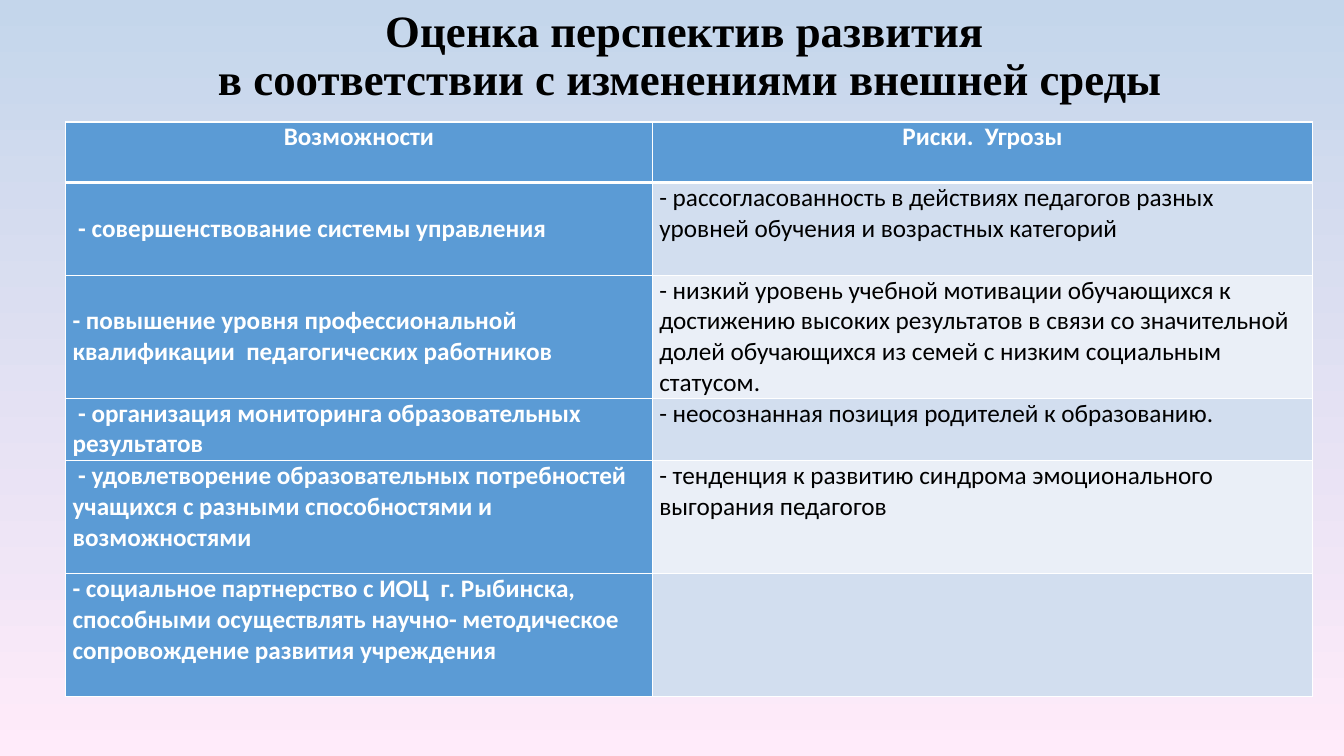
from dataclasses import dataclass

from lxml.etree import SubElement
from pptx import Presentation
from pptx.dml.color import RGBColor as Color
from pptx.enum.text import MSO_ANCHOR as Anchor, PP_ALIGN as Align
from pptx.oxml.ns import qn
from pptx.util import Inches, Pt

TITLE = "Оценка перспектив развития \vв соответствии с изменениями внешней среды"
HEADERS = ("Возможности", "Риски.  Угрозы")
ROWS = [
    (" - совершенствование системы управления",
     "- рассогласованность в действиях педагогов разных уровней обучения и возрастных категорий"),
    ("- повышение уровня профессиональной квалификации  педагогических работников",
     "- низкий уровень учебной мотивации обучающихся к достижению высоких результатов "
     "в связи со значительной долей обучающихся из семей с низким социальным статусом."),
    (" - организация мониторинга образовательных результатов",
     "- неосознанная позиция родителей к образованию."),
    (" - удовлетворение образовательных потребностей учащихся с разными способностями и возможностями",
     "- тенденция к развитию синдрома эмоционального выгорания педагогов"),
    ("- социальное партнерство с ИОЦ  г. Рыбинска,  способными осуществлять "
     "научно- методическое сопровождение развития учреждения", ""),
]
MIDDLE_ROWS = (1, 2)

SLIDE_SIZE = (13.33, 7.5)
TITLE_BOX = (0.36, 0.14, 12.97, 0.85)
TABLE_ORIGIN = (0.65, 1.21)
COLUMN_WIDTHS = (5.82, 6.55)
ROW_HEIGHTS = (0.6, 0.92, 1.22, 0.62, 1.12, 1.22)


@dataclass(frozen=True)
class Theme:
    title_font: str = "Times New Roman"
    body_font: str = "Calibri"
    title_size: int = 32
    body_size: int = 18
    dark: str = "000000"
    light: str = "FFFFFF"
    accent: str = "5B9BD5"
    bands: tuple = ("D2DEEF", "EAEFF7")
    background: tuple = ("C4D6EB", "FFEBFA")
    thin: int = 1
    thick: int = 3


THEME = Theme()


def format_runs(paragraph, font_name, size, color, bold):
    for run in paragraph.runs:
        run.font.name = font_name
        run.font.size = Pt(size)
        run.font.bold = bold
        run.font.color.rgb = Color.from_string(color)


def paint_background(slide):
    fill = slide.background.fill
    fill.gradient()
    fill.gradient_angle = 270
    for stop, color in zip(fill.gradient_stops, THEME.background):
        stop.color.rgb = Color.from_string(color)


def add_title(slide):
    title = slide.shapes.title
    title.left, title.top, title.width, title.height = map(Inches, TITLE_BOX)
    frame = title.text_frame
    frame.text = TITLE
    frame.word_wrap = True
    frame.vertical_anchor = Anchor.MIDDLE
    paragraph = frame.paragraphs[0]
    paragraph.alignment = Align.CENTER
    paragraph.line_spacing = 0.9
    format_runs(paragraph, THEME.title_font, THEME.title_size, THEME.dark, True)


def add_borders(cell, row):
    widths = {
        "a:lnL": THEME.thin,
        "a:lnR": THEME.thin,
        "a:lnT": THEME.thick if row == 1 else THEME.thin,
        "a:lnB": THEME.thick if row == 0 else THEME.thin,
    }
    properties = cell._tc.get_or_add_tcPr()
    for tag, width in widths.items():
        line = SubElement(properties, qn(tag), w=str(Pt(width)))
        solid = SubElement(line, qn("a:solidFill"))
        SubElement(solid, qn("a:srgbClr"), val=THEME.light)


def fill_cell(cell, row, column, text):
    emphasized = row == 0 or column == 0
    cell.margin_left = cell.margin_right = Inches(0.07)
    cell.margin_top = cell.margin_bottom = 0
    centered = column == 0 and row in MIDDLE_ROWS
    cell.vertical_anchor = Anchor.MIDDLE if centered else Anchor.TOP
    add_borders(cell, row)
    cell.fill.solid()
    band = THEME.bands[(row - 1) % len(THEME.bands)]
    cell.fill.fore_color.rgb = Color.from_string(THEME.accent if emphasized else band)
    cell.text_frame.text = text
    paragraph = cell.text_frame.paragraphs[0]
    paragraph.alignment = Align.CENTER if row == 0 else Align.LEFT
    color = THEME.light if emphasized else THEME.dark
    format_runs(paragraph, THEME.body_font, THEME.body_size, color, emphasized)


def add_prospects_table(slide):
    content = [HEADERS, *ROWS]
    size = (sum(COLUMN_WIDTHS), sum(ROW_HEIGHTS))
    table = slide.shapes.add_table(
        len(content), len(HEADERS), *map(Inches, TABLE_ORIGIN + size)).table
    for column, width in zip(table.columns, COLUMN_WIDTHS):
        column.width = Inches(width)
    for row, height in zip(table.rows, ROW_HEIGHTS):
        row.height = Inches(height)
    for row, texts in enumerate(content):
        for column, text in enumerate(texts):
            fill_cell(table.cell(row, column), row, column, text)


def main():
    presentation = Presentation()
    presentation.slide_width, presentation.slide_height = map(Inches, SLIDE_SIZE)
    slide = presentation.slides.add_slide(presentation.slide_layouts.get_by_name("Title Only"))
    paint_background(slide)
    add_title(slide)
    add_prospects_table(slide)
    presentation.save("out.pptx")


if __name__ == "__main__":
    main()
